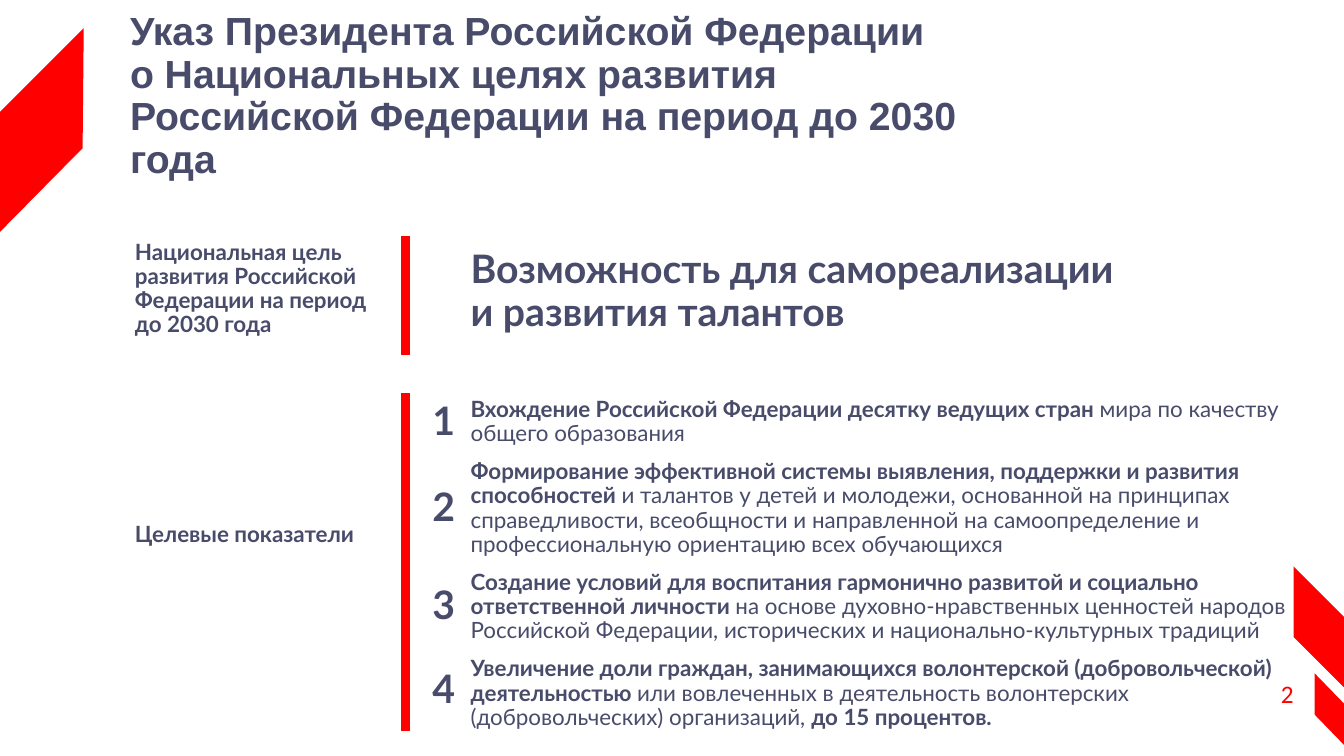
import pptx
import pptx.util
import pptx.dml.color
import pptx.enum.shapes
import pptx.enum.text
import pptx.oxml

THEME = {
    "red": pptx.dml.color.RGBColor.from_string("FF0000"),
    "ink": pptx.dml.color.RGBColor.from_string("484C6A"),
    "display": pptx.util.Pt(28),
    "number": pptx.util.Pt(18),
    "body": pptx.util.Pt(16),
    "bar": pptx.util.Pt(6),
}
ALIGN = pptx.enum.text.PP_ALIGN
ANCHOR = pptx.enum.text.MSO_ANCHOR

prs = pptx.Presentation()
prs.slide_width = pptx.util.Inches(13.33)
prs.slide_height = pptx.util.Inches(7.5)
s = prs.slides.add_slide(prs.slide_layouts[6])

# The grid has 100 columns and 100 rows
COL, ROW = prs.slide_width / 100, prs.slide_height / 100
LABEL_X, BAR_X, NUMBER_X, TEXT_X = 9.3, 30.16, 31.43, 34.28
GOAL_Y, TARGETS_Y = 31.2, 52


def grid(x, y):
    return round(x * COL), round(y * ROW)


def add_text(x, y, width, height, paragraphs, size, font="Lato", color="ink",
             bold=True, inset=None, spacing=0.9):
    """Add a text box; a paragraph is a string or a list of (text, bold) runs."""
    sp = s.shapes.add_textbox(*grid(x, y), *grid(width, height))
    tf = sp.text_frame
    tf.word_wrap = True
    if inset is not None:
        tf.margin_left = tf.margin_right = inset
        tf.margin_top = tf.margin_bottom = inset
    for i, content in enumerate(paragraphs):
        p = tf.paragraphs[0] if i == 0 else tf.add_paragraph()
        if i:
            p.space_before = pptx.util.Pt(10)
        p.line_spacing = spacing
        p.font.name = font
        p.font.size = THEME[size]
        p.font.color.rgb = THEME[color]
        if isinstance(content, str):
            p.text = content
            p.font.bold = bold
        else:
            for text, strong in content:
                r = p.add_run()
                r.text = text
                r.font.bold = strong
    return tf


small_inset = pptx.util.Inches(0.05)
tf = add_text(92.87, 89.07, 3.75, 5.33, ["2"], "number", font="Calibri",
              color="red", bold=False, inset=small_inset, spacing=1.0)
tf.paragraphs[0].alignment = ALIGN.RIGHT

ribbons = [
    [(0, 30.67), (0, 14.8), (6.23, 3.73), (6.15, 19.6)],
    [(100, 90.93), (96.25, 84.27), (96.25, 74.93), (100, 81.6)],
    [(100, 98.53), (97.82, 94.53), (97.82, 89.07), (100, 93.07)],
]
for corners in ribbons:
    start, *rest = [grid(*corner) for corner in corners]
    builder = s.shapes.build_freeform(*start)
    builder.add_line_segments(rest, close=True)
    sp = builder.convert_to_shape()
    sp.shadow.inherit = False
    sp.fill.solid()
    sp.fill.fore_color.rgb = THEME["red"]
    sp.line.fill.background()

for top, bottom in [(GOAL_Y, 46.93), (TARGETS_Y, 96.67)]:
    bar = s.shapes.add_connector(pptx.enum.shapes.MSO_CONNECTOR.STRAIGHT,
                                 *grid(BAR_X, top), *grid(BAR_X, bottom))
    bar.line.color.rgb = THEME["red"]
    bar.line.width = THEME["bar"]
    bar._element.spPr.append(pptx.oxml.parse_xml(
        '<a:effectLst xmlns:a="http://schemas.openxmlformats.org/drawingml/2006/main"/>'))

tf = add_text(LABEL_X, 3.6, 66.1, 18.4,
              ["Указ Президента Российской Федерации\v"
               "о Национальных целях развития Российской Федерации на период до 2030 года"],
              "display", font="Arial", inset=small_inset)
tf.vertical_anchor = ANCHOR.MIDDLE

add_text(LABEL_X, GOAL_Y, 22.13, 15.73,
         ["Национальная цель\vразвития Российской Федерации на период\vдо 2030 года"], "body")
add_text(LABEL_X, 68.53, 19.58, 7.07, ["Целевые показатели"], "body")
add_text(TEXT_X, 32.4, 50.1, 14.4,
         ["Возможность для самореализации\vи развития талантов"], "display")

targets = [
    [("Вхождение Российской Федерации десятку ведущих стран ", True),
     ("мира по качеству общего образования", False)],
    [("Формирование эффективной системы выявления, поддержки и развития способностей ", True),
     ("и талантов у детей и молодежи, основанной на принципах справедливости, всеобщности "
      "и направленной на самоопределение и профессиональную ориентацию всех обучающихся", False)],
    [("Создание условий для воспитания гармонично развитой и социально ответственной "
      "личности ", True),
     ("на основе духовно-нравственных ценностей народов Российской Федерации, "
      "исторических и национально-культурных традиций", False)],
    [("Увеличение доли граждан, занимающихся волонтерской (добровольческой) "
      "деятельностью ", True),
     ("или вовлеченных в деятельность волонтерских (добровольческих) организаций, ", False),
     ("до 15 процентов.", True)],
]
add_text(TEXT_X, TARGETS_Y, 63, 33.33, targets, "body")
for number, y in enumerate([52.53, 63.87, 76.8, 87.87], start=1):
    add_text(NUMBER_X, y, 3.3, 6.4, [str(number)], "display")

prs.save("out.pptx")
